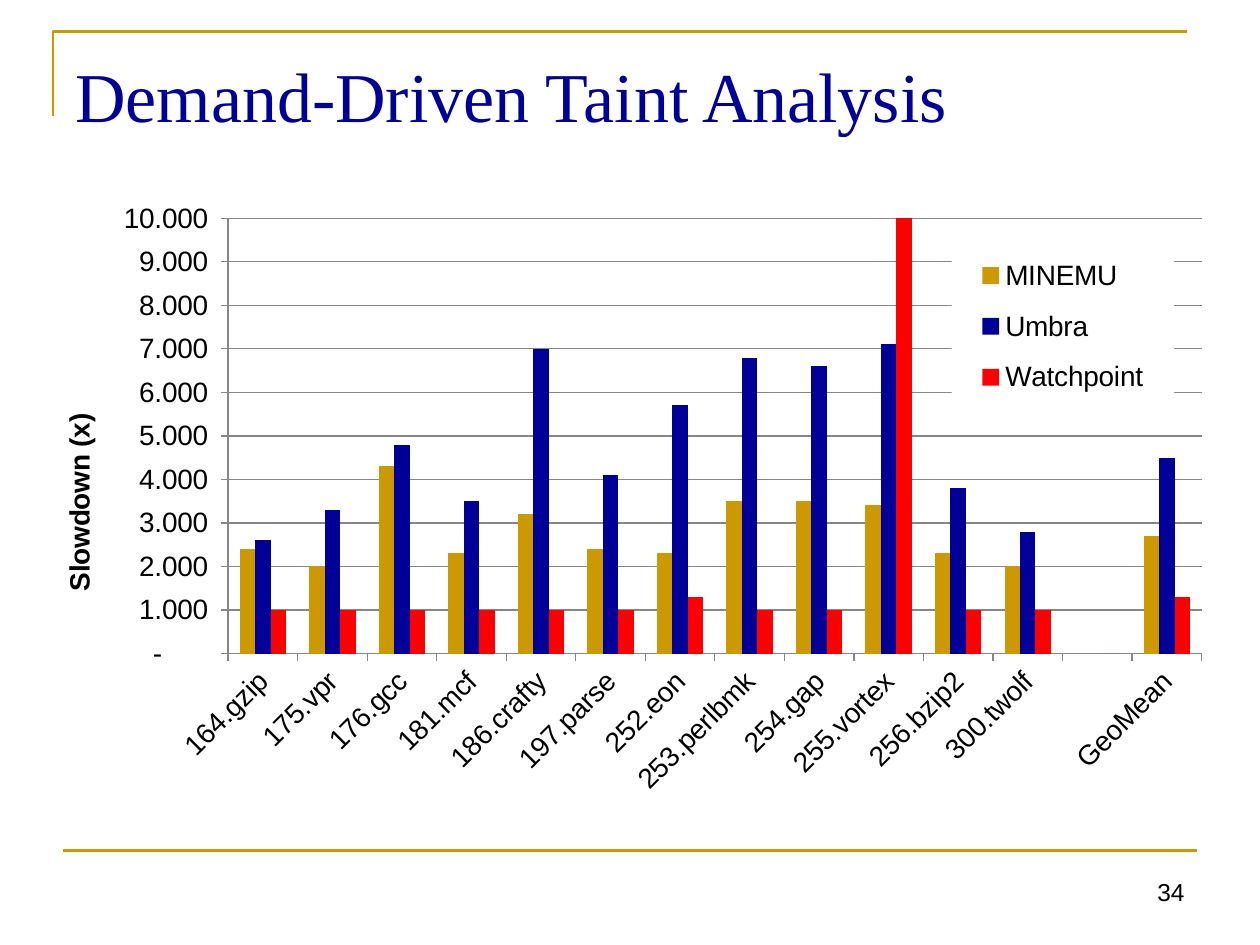
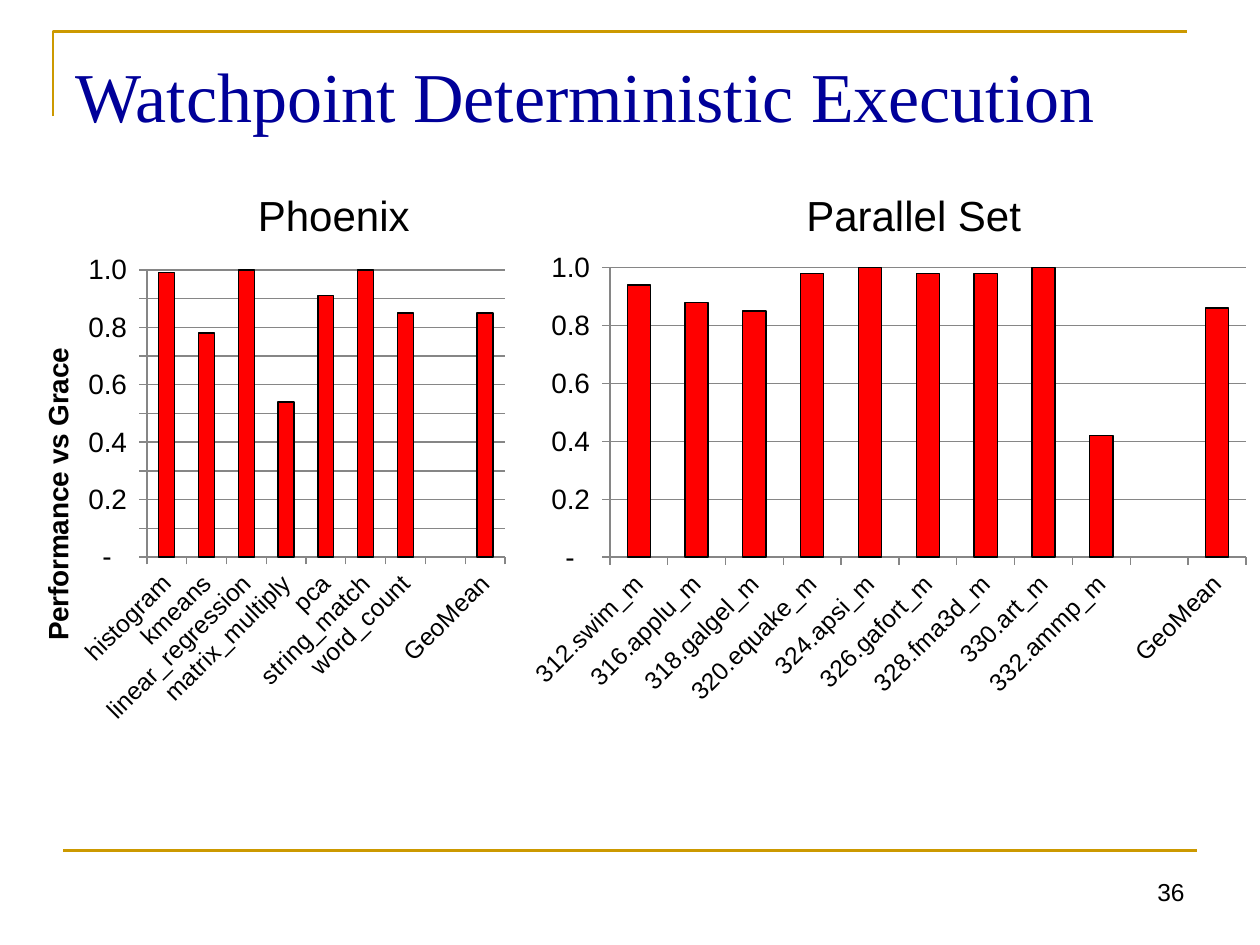
from dataclasses import dataclass
from typing import NamedTuple, Optional

from lxml import etree
from pptx import Presentation
from pptx.chart.data import CategoryChartData
from pptx.dml.color import RGBColor
from pptx.enum.chart import XL_CHART_TYPE, XL_LEGEND_POSITION, XL_TICK_MARK
from pptx.enum.shapes import MSO_CONNECTOR
from pptx.enum.text import MSO_ANCHOR, PP_ALIGN
from pptx.oxml.ns import qn
from pptx.util import Cm, Pt

COLUMNS = XL_CHART_TYPE.COLUMN_CLUSTERED
LEGEND_RIGHT = XL_LEGEND_POSITION.RIGHT
TICK_OUTSIDE = XL_TICK_MARK.OUTSIDE
STRAIGHT = MSO_CONNECTOR.STRAIGHT
TOP = MSO_ANCHOR.TOP
LEFT, CENTER, RIGHT = PP_ALIGN.LEFT, PP_ALIGN.CENTER, PP_ALIGN.RIGHT


@dataclass(frozen=True)
class Theme:
    gold: RGBColor = RGBColor(0xCC, 0x99, 0x00)
    navy: RGBColor = RGBColor(0x00, 0x00, 0x99)
    red: RGBColor = RGBColor(0xFF, 0x00, 0x00)
    black: RGBColor = RGBColor(0x00, 0x00, 0x00)
    grid: RGBColor = RGBColor(0x86, 0x86, 0x86)
    title_font: str = "Times New Roman"
    body_font: str = "Arial"
    title_size: int = 40
    heading_size: int = 24
    label_size: int = 16
    small_size: int = 14
    rule_width: float = 1.5
    thin_width: float = 0.75


THEME = Theme()


class Box(NamedTuple):
    """Left, top, width and height in centimetres."""
    left: float
    top: float
    width: float
    height: float

    def lengths(self) -> tuple:
        return tuple(Cm(value) for value in self)


class Fraction(NamedTuple):
    """A place inside a chart, in fractions of the chart's size."""
    x: float
    y: float
    w: Optional[float] = None
    h: Optional[float] = None


class Series(NamedTuple):
    name: str
    values: list
    color: RGBColor


@dataclass(frozen=True)
class ColumnChart:
    box: Box
    plot: Fraction
    categories: list
    series: list
    maximum: float
    step: float
    number_format: str
    category_size: int = THEME.small_size
    outlined: bool = True
    axis_title: str = ""
    axis_title_place: Optional[Fraction] = None
    legend: Optional[Fraction] = None


THREE_DECIMALS = '_(* #,##0.000_);_(* \\(#,##0.000\\);_(* "-"???_);_(@_)'
ONE_DECIMAL = '_(* #,##0.0_);_(* \\(#,##0.0\\);_(* "-"?_);_(@_)'

TAINT = ColumnChart(
    Box(0.48, 3.84, 24.23, 12.45),
    Fraction(0.17, 0.045, 0.81, 0.705),
    ["164.gzip", "175.vpr", "176.gcc", "181.mcf", "186.crafty", "197.parse",
     "252.eon", "253.perlbmk", "254.gap", "255.vortex", "256.bzip2",
     "300.twolf", "", "GeoMean"],
    [Series("MINEMU", [2.4, 2, 4.3, 2.3, 3.2, 2.4, 2.3, 3.5, 3.5, 3.4, 2.3, 2,
                       None, 2.7], THEME.gold),
     Series("Umbra", [2.6, 3.3, 4.8, 3.5, 7, 4.1, 5.7, 6.8, 6.6, 7.1, 3.8, 2.8,
                      None, 4.5], THEME.navy),
     Series("Watchpoint", [1, 1, 1, 1, 1, 1, 1.3, 1, 1, 21.5, 1, 1, 0, 1.3],
            THEME.red)],
    maximum=10, step=1, number_format=THREE_DECIMALS,
    category_size=THEME.label_size, outlined=False,
    axis_title="Slowdown (x)", axis_title_place=Fraction(0.027, 0.353),
    legend=Fraction(0.772, 0.08, 0.185, 0.28),
)

PHOENIX = ColumnChart(
    Box(0, 4.95, 10.39, 9.83),
    Fraction(0.285, 0.05, 0.695, 0.589),
    ["histogram", "kmeans", "linear_regression", "matrix_multiply", "pca",
     "string_match", "word_count", "", "GeoMean"],
    [Series("Series 1", [0.99, 0.78, 1, 0.54, 0.91, 1, 0.85, None, 0.85],
            THEME.red)],
    maximum=1, step=0.1, number_format=ONE_DECIMAL,
    axis_title="Performance vs Grace", axis_title_place=Fraction(0.068, 0.2),
)

PARALLEL_SUITE = ColumnChart(
    Box(10.49, 4.95, 14.91, 9.45),
    Fraction(0.121, 0.047, 0.86, 0.618),
    ["312.swim_m", "316.applu_m", "318.galgel_m", "320.equake_m", "324.apsi_m",
     "326.gafort_m", "328.fma3d_m", "330.art_m", "332.ammp_m", "", "GeoMean"],
    [Series("Series 1", [0.94, 0.88, 0.85, 0.98, 1, 0.98, 0.98, 1, 0.42, None,
                         0.86], THEME.red)],
    maximum=1, step=0.2, number_format=ONE_DECIMAL,
)


def style_font(font, size: float, *, name: str = THEME.body_font,
               color: RGBColor = THEME.black, bold: bool = False) -> None:
    font.name, font.size, font.bold = name, Pt(size), bold
    font.color.rgb = color


def style_line(line, color: RGBColor, width: float) -> None:
    line.color.rgb = color
    line.width = Pt(width)


def add_text(slide, text: str, box: Box, *, size: float, align=LEFT,
             margin_top: float = 0.13, **font_format) -> None:
    frame = slide.shapes.add_textbox(*box.lengths()).text_frame
    frame.word_wrap = True
    frame.vertical_anchor = TOP
    frame.margin_top = Cm(margin_top)
    paragraph = frame.paragraphs[0]
    paragraph.alignment = align
    run = paragraph.add_run()
    run.text = text
    style_font(run.font, size, **font_format)


def add_framed_slide(presentation, title: str, number: int):
    """Add a slide with its gold rules, title and page number."""
    slide = presentation.slides.add_slide(presentation.slide_layouts[6])
    builder = slide.shapes.build_freeform(Cm(1.07), Cm(2.34))
    builder.add_line_segments(
        [(Cm(1.07), Cm(0.64)), (Cm(23.93), Cm(0.64))], close=False)
    corner = builder.convert_to_shape()
    corner.fill.background()
    corner.shadow.inherit = False
    style_line(corner.line, THEME.gold, THEME.rule_width)

    rule = slide.shapes.add_connector(
        STRAIGHT, Cm(1.27), Cm(17.15), Cm(24.13), Cm(17.15))
    etree.SubElement(rule._element.spPr, qn("a:effectLst"))
    style_line(rule.line, THEME.gold, THEME.rule_width)

    add_text(slide, title, Box(1.27, 0.76, 22.86, 1.78), margin_top=0.3,
             size=THEME.title_size, name=THEME.title_font, color=THEME.navy)
    add_text(slide, str(number), Box(18.21, 17.55, 5.92, 1.3),
             size=THEME.small_size, align=RIGHT)
    return slide


def place_in_chart(element, index: int, place: Fraction) -> None:
    """Give a chart part a manual layout as its child at the given index."""
    for old_layout in element.findall(qn("c:layout")):
        element.remove(old_layout)
    layout = etree.Element(qn("c:layout"))
    manual = etree.SubElement(layout, qn("c:manualLayout"))

    def setting(tag: str, value) -> None:
        etree.SubElement(manual, qn(f"c:{tag}")).set("val", str(value))

    if element.tag == qn("c:plotArea"):
        setting("layoutTarget", "inner")
    setting("xMode", "edge")
    setting("yMode", "edge")
    for tag, value in place._asdict().items():
        if value is not None:
            setting(tag, value)
    element.insert(index, layout)


def style_axes(chart, design: ColumnChart) -> None:
    category_axis, value_axis = chart.category_axis, chart.value_axis
    for axis, size in ((category_axis, design.category_size),
                       (value_axis, THEME.label_size)):
        style_font(axis.tick_labels.font, size)
        style_line(axis.format.line, THEME.grid, THEME.thin_width)
        axis.major_tick_mark = TICK_OUTSIDE
    label_body = category_axis._element.find(qn("c:txPr")).find(qn("a:bodyPr"))
    label_body.set("rot", "-2700000")
    label_body.set("vert", "horz")

    value_axis.minimum_scale = 0
    value_axis.maximum_scale = design.maximum
    value_axis.major_unit = design.step
    value_axis.tick_labels.number_format = design.number_format
    value_axis.tick_labels.number_format_is_linked = False
    value_axis.has_major_gridlines = True
    style_line(value_axis.major_gridlines.format.line, THEME.grid,
               THEME.thin_width)
    if design.axis_title:
        title = value_axis.axis_title
        frame = title.text_frame
        frame.text = design.axis_title
        style_font(frame.paragraphs[0].runs[0].font, THEME.label_size,
                   bold=True)
        title_body = frame._txBody.find(qn("a:bodyPr"))
        title_body.set("rot", "-5400000")
        title_body.set("vert", "horz")
        place_in_chart(title._element, 1, design.axis_title_place)


def add_legend(chart, place: Fraction) -> None:
    """Lay a white legend over the plot."""
    chart.has_legend = True
    legend = chart.legend
    legend.position = LEGEND_RIGHT
    legend.include_in_layout = True
    style_font(legend.font, THEME.label_size)
    place_in_chart(legend._element, 1, place)
    properties = etree.Element(qn("c:spPr"))
    fill = etree.SubElement(properties, qn("a:solidFill"))
    etree.SubElement(fill, qn("a:srgbClr")).set("val", "FFFFFF")
    legend._element.find(qn("c:overlay")).addnext(properties)


def add_column_chart(slide, design: ColumnChart) -> None:
    data = CategoryChartData()
    data.categories = design.categories
    for series in design.series:
        data.add_series(series.name, series.values)
    chart = slide.shapes.add_chart(COLUMNS, *design.box.lengths(), data).chart
    chart.has_title = False
    chart.has_legend = False
    style_font(chart.font, 10)
    plot = chart.plots[0]
    plot.gap_width, plot.overlap = 150, 0
    plot.vary_by_categories = False
    for drawn, series in zip(plot.series, design.series):
        drawn.invert_if_negative = False
        drawn.format.fill.solid()
        drawn.format.fill.fore_color.rgb = series.color
        if design.outlined:
            style_line(drawn.format.line, THEME.black, THEME.thin_width)
    style_axes(chart, design)
    plot_area = chart._chartSpace.find(qn("c:chart")).find(qn("c:plotArea"))
    place_in_chart(plot_area, 0, design.plot)
    if design.legend:
        add_legend(chart, design.legend)


def main() -> None:
    presentation = Presentation()
    presentation.slide_width, presentation.slide_height = Cm(25.4), Cm(19.05)

    taint_slide = add_framed_slide(
        presentation, "Demand-Driven Taint Analysis", 34)
    add_column_chart(taint_slide, TAINT)

    execution_slide = add_framed_slide(
        presentation, "Watchpoint Deterministic Execution", 36)
    for heading, box, design in (
            ("Phoenix", Box(2.59, 3.68, 8.28, 1.27), PHOENIX),
            ("Parallel Set", Box(12.07, 3.68, 12.7, 1.27), PARALLEL_SUITE)):
        add_column_chart(execution_slide, design)
        add_text(execution_slide, heading, box, size=THEME.heading_size,
                 align=CENTER)

    presentation.save("out.pptx")


if __name__ == "__main__":
    main()
